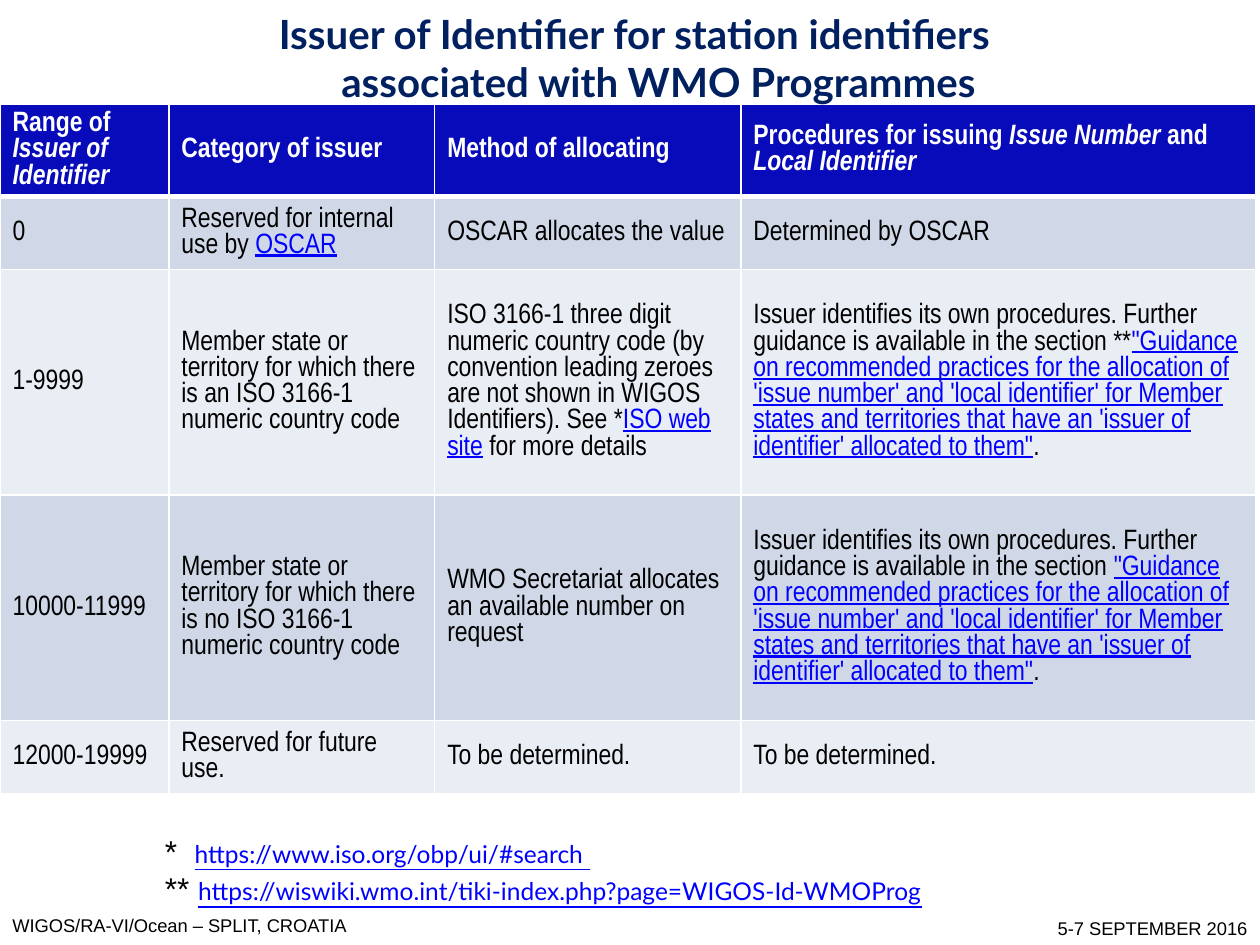
from dataclasses import dataclass

from lxml.etree import SubElement
from pptx import Presentation
from pptx.dml.color import RGBColor
from pptx.enum.text import MSO_ANCHOR, PP_ALIGN
from pptx.oxml.ns import qn
from pptx.util import Inches, Pt


@dataclass(frozen=True)
class Theme:
    title: str = "002060"
    text: str = "000000"
    link: str = "0000FF"
    white: str = "FFFFFF"
    header: str = "070BB9"
    bands: tuple = ("D0D8E8", "E9EDF4")
    heading_font: str = "Lato"
    body_font: str = "Arial"
    table_font: str = "Arial Narrow"
    title_size: float = 23
    star_size: float = 18
    table_size: float = 16
    table_leading: float = 15
    link_size: float = 14
    footer_size: float = 10.5


T = Theme()

# Text is a list of (words, style) runs; style is "", "italic" or "link".
TITLE = "Issuer of Identifier for station identifiers associated with WMO Programmes"
GUIDANCE = ("\"Guidance on recommended practices for the allocation of 'issue number' "
            "and 'local identifier' for Member states and territories that have an "
            "'issuer of identifier' allocated to them\"", "link")
OWN_PROCEDURES = ("Issuer identifies its own procedures. Further guidance is available "
                  "in the section ")
ROWS = [
    [[("Range of ", ""), ("Issuer of Identifier", "italic")],
     [("Category of issuer", "")],
     [("Method of allocating", "")],
     [("Procedures for issuing ", ""), ("Issue Number", "italic"),
      (" and ", ""), ("Local Identifier", "italic")]],
    [[("0", "")],
     [("Reserved for internal use by ", ""), ("OSCAR", "link")],
     [("OSCAR allocates the value", "")],
     [("Determined by OSCAR", "")]],
    [[("1-9999", "")],
     [("Member state or territory for which there is an ISO 3166-1 numeric country code", "")],
     [("ISO 3166-1 three digit numeric country code (by convention leading zeroes are "
       "not shown in WIGOS Identifiers). See *", ""),
      ("ISO web site", "link"), (" for more details", "")],
     [(OWN_PROCEDURES + "**", ""), GUIDANCE, (".", "")]],
    [[("10000-11999", "")],
     [("Member state or territory for which there is no ISO 3166-1 numeric country code", "")],
     [("WMO Secretariat allocates an available number on request", "")],
     [(OWN_PROCEDURES, ""), GUIDANCE, (".", "")]],
    [[("12000-19999", "")],
     [("Reserved for future use.", "")],
     [("To be determined.", "")],
     [("To be determined.", "")]],
]
COL_WIDTHS = (1.34, 2.11, 2.43, 4.09)
ROW_HEIGHTS = (0.73, 0.58, 1.79, 1.79, 0.58)
TABLE_TOP = 0.83

FOOTNOTES = [
    ("*  ", "https://www.iso.org/obp/ui/#search "),
    ("** ", "https://wiswiki.wmo.int/tiki-index.php?page=WIGOS-Id-WMOProg"),
]
FOOTERS = [
    ("WIGOS/RA-VI/Ocean – SPLIT, CROATIA", (0, 7.21, 3.55, 0.29), PP_ALIGN.LEFT),
    ("5-7 SEPTEMBER 2016", (7.74, 7.23, 2.26, 0.27), PP_ALIGN.RIGHT),
]


def add_run(p, text, font, size, color, bold=False, italic=False, underline=False):
    r = p.add_run()
    r.text = text
    r.font.name, r.font.size = font, Pt(size)
    r.font.color.rgb = RGBColor.from_string(color)
    r.font.bold, r.font.italic, r.font.underline = bold, italic, underline


def add_text_box(slide, box, anchor=MSO_ANCHOR.TOP):
    tf = slide.shapes.add_textbox(*map(Inches, box)).text_frame
    tf.word_wrap = True
    tf.vertical_anchor = anchor
    return tf


def set_hanging_indent(p, inches=0.38):
    pPr = p._p.get_or_add_pPr()
    pPr.set("marL", str(Inches(inches)))
    pPr.set("indent", str(-Inches(inches)))


def set_borders(cell, bottom):
    """White 1 pt lines round the cell, with its own bottom width in points."""
    tcPr = cell._tc.get_or_add_tcPr()
    for side, width in (("L", 1), ("R", 1), ("T", 1), ("B", bottom)):
        ln = SubElement(tcPr, qn(f"a:ln{side}"), w=str(Pt(width)))
        SubElement(SubElement(ln, qn("a:solidFill")), qn("a:srgbClr"), val=T.white)


def fill_cell(cell, runs, row):
    is_header = row == 0
    set_borders(cell, bottom=3 if is_header else 1)
    cell.fill.solid()
    fill = T.header if is_header else T.bands[(row - 1) % 2]
    cell.fill.fore_color.rgb = RGBColor.from_string(fill)
    cell.vertical_anchor = MSO_ANCHOR.MIDDLE
    p = cell.text_frame.paragraphs[0]
    p.line_spacing = Pt(T.table_leading)
    for text, style in runs:
        is_link = style == "link"
        color = T.link if is_link else T.white if is_header else T.text
        add_run(p, text, T.table_font, T.table_size, color,
                bold=is_header, italic=style == "italic", underline=is_link)


def add_issuer_table(slide):
    table = slide.shapes.add_table(
        len(ROWS), len(COL_WIDTHS), 0, Inches(TABLE_TOP),
        Inches(sum(COL_WIDTHS)), Inches(sum(ROW_HEIGHTS))).table
    for column, width in zip(table.columns, COL_WIDTHS):
        column.width = Inches(width)
    for i, (cells, height) in enumerate(zip(ROWS, ROW_HEIGHTS)):
        table.rows[i].height = Inches(height)
        for j, runs in enumerate(cells):
            fill_cell(table.cell(i, j), runs, i)


def add_title(slide):
    p = add_text_box(slide, (1.56, 0, 6.96, 0.91), MSO_ANCHOR.MIDDLE).paragraphs[0]
    p.alignment = PP_ALIGN.CENTER
    set_hanging_indent(p)
    add_run(p, TITLE, T.heading_font, T.title_size, T.title, bold=True)


def add_footnotes(slide):
    tf = add_text_box(slide, (1.21, 6.55, 7.92, 0.71))
    for i, (stars, url) in enumerate(FOOTNOTES):
        p = tf.add_paragraph() if i else tf.paragraphs[0]
        add_run(p, stars, T.body_font, T.star_size, T.text)
        add_run(p, url, T.heading_font, T.link_size, T.link, underline=True)


def add_footers(slide):
    for text, box, alignment in FOOTERS:
        p = add_text_box(slide, box).paragraphs[0]
        p.alignment = alignment
        set_hanging_indent(p)
        add_run(p, text, T.body_font, T.footer_size, T.text)


def main():
    prs = Presentation()
    prs.slide_width, prs.slide_height = Inches(10), Inches(7.5)
    slide = prs.slides.add_slide(prs.slide_layouts[6])
    add_footers(slide)
    add_issuer_table(slide)
    add_title(slide)
    add_footnotes(slide)
    prs.save("out.pptx")


if __name__ == "__main__":
    main()
